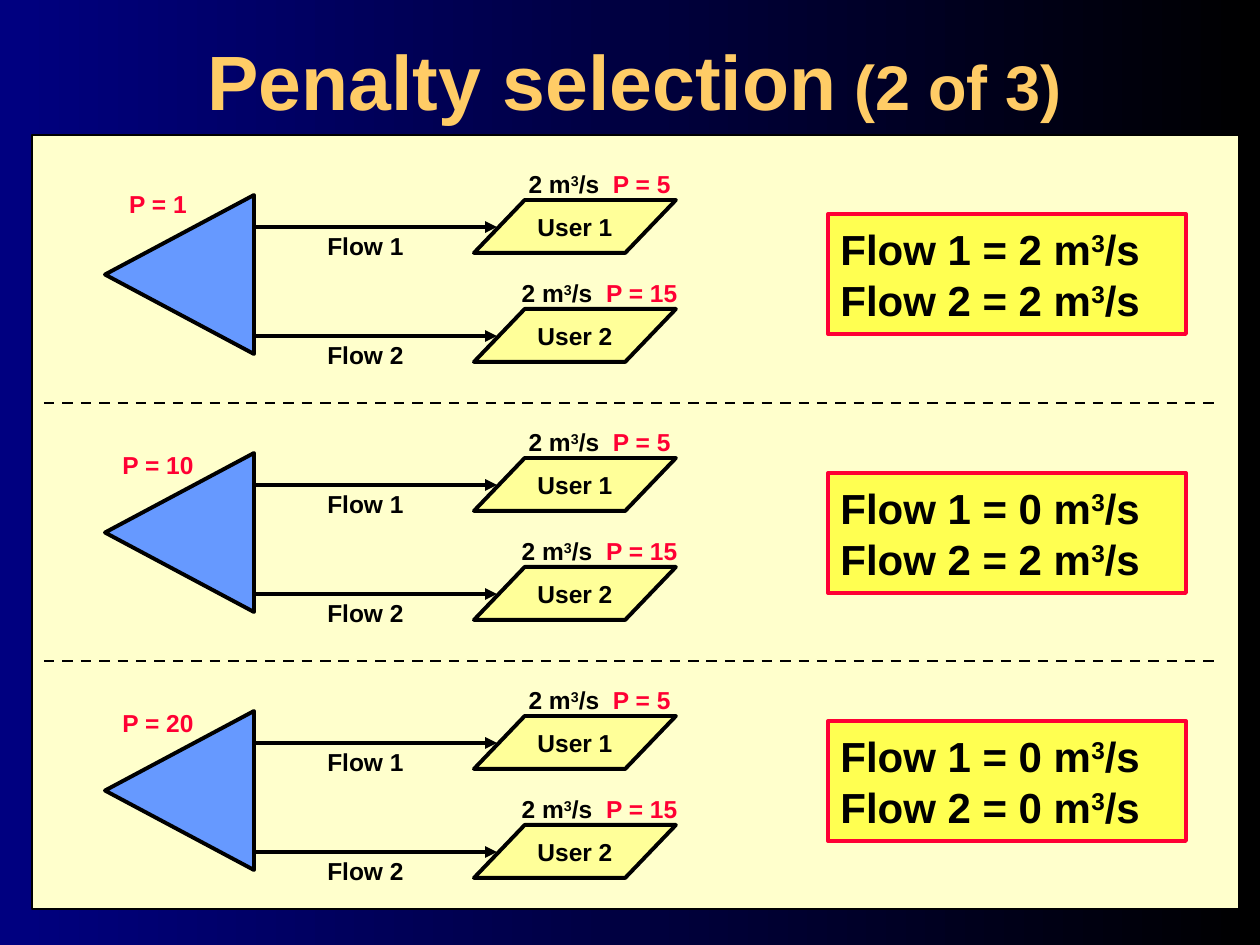
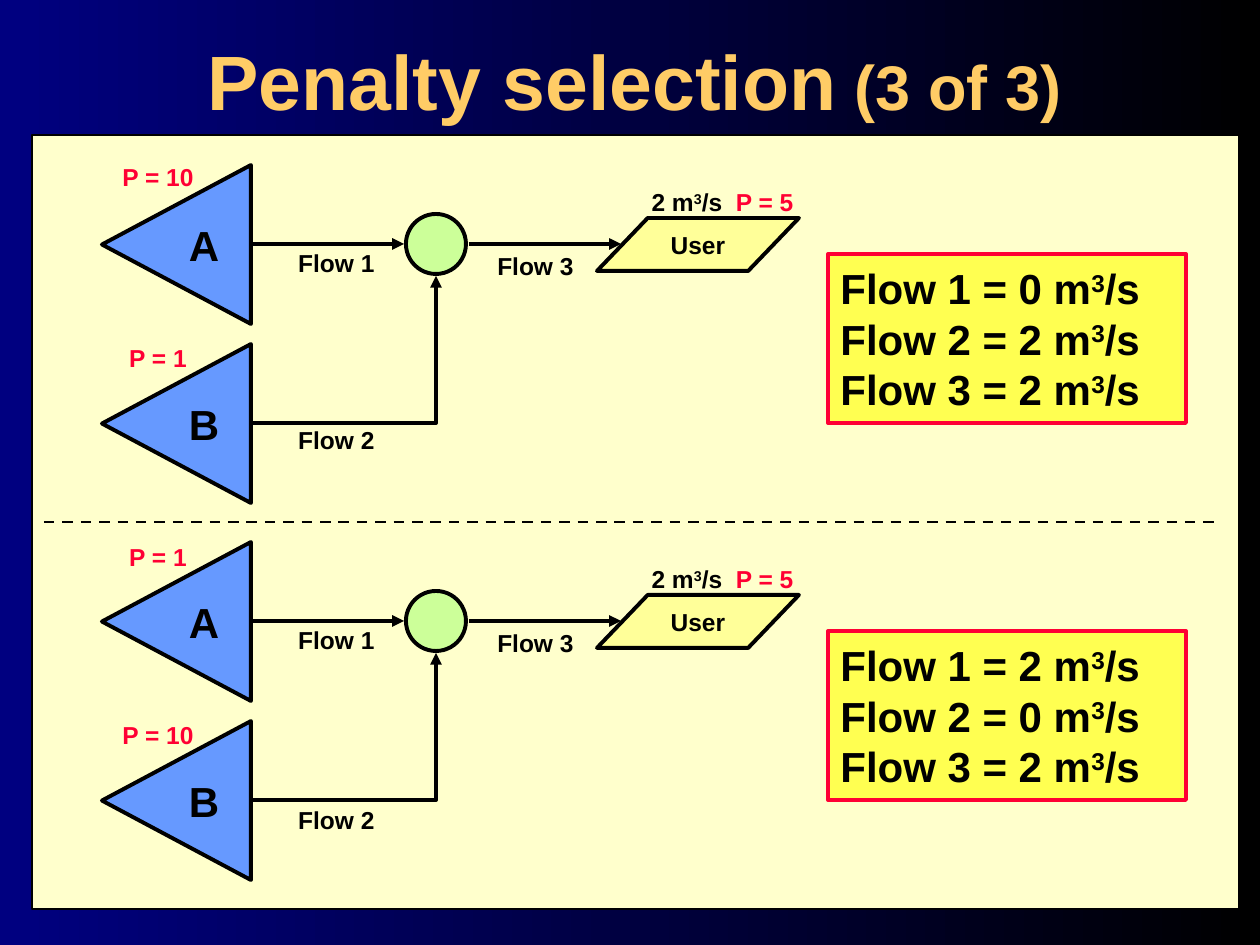
from lxml.etree import SubElement
from pptx import Presentation
from pptx.dml.color import RGBColor
from pptx.enum.dml import MSO_LINE
from pptx.enum.shapes import MSO_CONNECTOR, MSO_SHAPE
from pptx.enum.text import MSO_ANCHOR, MSO_AUTO_SIZE, PP_ALIGN
from pptx.oxml.ns import qn
from pptx.util import Emu, Pt

# Shared look
NAVY = RGBColor(0x00, 0x00, 0x80)
BLACK = RGBColor(0x00, 0x00, 0x00)
GOLD = RGBColor(0xFF, 0xCC, 0x66)
CREAM = RGBColor(0xFF, 0xFF, 0xCC)
YELLOW = RGBColor(0xFF, 0xFF, 0x00)
PALE_YELLOW = RGBColor(0xFF, 0xFF, 0x99)
RED = RGBColor(0xFF, 0x00, 0x33)
BLUE = RGBColor(0x66, 0x99, 0xFF)
GREEN = RGBColor(0xCC, 0xFF, 0x99)

FONT = {"name": "Arial", "bold": True}
SMALL = {**FONT, "size": Pt(14), "color": BLACK}
LARGE = {**FONT, "size": Pt(24), "color": BLACK}
TITLE = {**FONT, "size": Pt(44), "color": GOLD}
PENALTY = {**SMALL, "color": RED}
CENTERED = {"alignment": PP_ALIGN.CENTER}
TIGHT = {"alignment": PP_ALIGN.CENTER, "line_spacing": 0.8}
LEFT = {"alignment": PP_ALIGN.LEFT}

PIXEL = 914400 / 126
SLIDE_SIZE = (1260, 945)
TITLE_BOX = (20, 21, 1229, 95)
BOARD = (32, 135, 1207, 774)
DIVIDER = (44, 1216)
PANEL_LEFT, PANEL_WIDTH = 828, 358
TRIANGLE_SIZE = (159, 149)
LABEL_SIZE = (179, 37)

# Slide content: positions are top edges unless said otherwise
TWO_USERS = {
    "part": "(2 of 3)",
    "dividers": [403, 661],
    "panel_height": 120,
    "scenes": [
        {"offset": 0, "penalty": (1, 190), "flows": [2, 2], "panel": 214},
        {"offset": 258, "penalty": (10, 451), "flows": [0, 2], "panel": 473},
        {"offset": 516, "penalty": (20, 709), "flows": [0, 0], "panel": 721},
    ],
}
USERS = [("User 1", "Flow 1", 5), ("User 2", "Flow 2", 15)]
FIRST_ROW, ROW_STEP = 227, 109

TWO_SOURCES = {
    "part": "(3 of 3)",
    "dividers": [522],
    "panel_height": 169,
    "scenes": [
        {"offset": 0, "flows": [0, 2, 2], "panel": 254, "flow_2_label": 421,
         "sources": [("A", 10, 163), ("B", 1, 344)]},
        {"offset": 377, "flows": [2, 0, 2], "panel": 631, "flow_2_label": 801,
         "sources": [("A", 1, 543), ("B", 10, 721)]},
    ],
}
FIRST_SOURCE, SOURCE_STEP = 170, 179


def px(*lengths):
    return [Emu(round(length * PIXEL)) for length in lengths]


def apply_format(target, values):
    for name, value in values.items():
        if name == "color":
            target.color.rgb = value
        else:
            setattr(target, name, value)


# Text
def cubic_metres(text, font):
    return [(f"{text} m", font), ("3", {**font, "raised": True}), ("/s", font)]


def write(text_frame, paragraphs, paragraph_format, wrap=False):
    apply_format(text_frame, {"word_wrap": wrap, "auto_size": MSO_AUTO_SIZE.NONE,
                              "vertical_anchor": MSO_ANCHOR.MIDDLE})
    for index, runs in enumerate(paragraphs):
        paragraph = text_frame.add_paragraph() if index else text_frame.paragraphs[0]
        apply_format(paragraph, paragraph_format)
        for text, font in runs:
            run = paragraph.add_run()
            run.text = text
            apply_format(run.font, {k: v for k, v in font.items() if k != "raised"})
            if font.get("raised"):
                run._r.get_or_add_rPr().set("baseline", "30000")


def add_label(slide, box, runs, paragraph_format=CENTERED):
    write(slide.shapes.add_textbox(*px(*box)).text_frame, [runs], paragraph_format)


# Shapes and lines
def add_block(slide, kind, box, fill, line=BLACK, width=2.25):
    shape = slide.shapes.add_shape(kind, *px(*box))
    shape.shadow.inherit = False
    shape.fill.solid()
    shape.fill.fore_color.rgb = fill
    apply_format(shape.line, {"color": line, "width": Pt(width)})
    return shape


def add_line(slide, start, end, width=2.25, arrow=True, kind=MSO_CONNECTOR.STRAIGHT):
    connector = slide.shapes.add_connector(kind, *px(*start, *end))
    apply_format(connector.line, {"color": BLACK, "width": Pt(width)})
    properties = connector.element.spPr
    if arrow:
        SubElement(properties.find(qn("a:ln")), qn("a:tailEnd"), type="triangle")
    SubElement(properties, qn("a:effectLst"))
    return connector


# Diagram parts
def add_source(slide, left, top, penalty, penalty_top, name=None):
    triangle = add_block(slide, MSO_SHAPE.ISOSCELES_TRIANGLE,
                         (left, top, *TRIANGLE_SIZE), BLUE)
    triangle.rotation = 270
    if name:
        write(triangle.text_frame, [[(name, LARGE)]], CENTERED)
        triangle.element.txBody.bodyPr.set("vert", "eaVert")
    add_label(slide, (113, penalty_top, 90, 33), [(f"P = {penalty}", PENALTY)], TIGHT)


def add_user(slide, left, row, name, penalty):
    user = add_block(slide, MSO_SHAPE.PARALLELOGRAM, (left, row - 27, 202, 53), PALE_YELLOW)
    user.adjustments[0] = 0.958
    write(user.text_frame, [[(name, SMALL)]], CENTERED)
    demand = cubic_metres("2", SMALL) + [("  ", SMALL), (f"P = {penalty}", PENALTY)]
    add_label(slide, (left + 41, row - 62, 169, 43), demand, TIGHT)


def add_flow_label(slide, left, top, text):
    add_label(slide, (left, top, *LABEL_SIZE), [(text, SMALL)])


def add_panel(slide, top, height, flows):
    panel = add_block(slide, MSO_SHAPE.RECTANGLE,
                      (PANEL_LEFT, top, PANEL_WIDTH, height), YELLOW, RED)
    color = panel.element.spPr.find(qn("a:solidFill"))[0]
    SubElement(color, qn("a:alpha"), val="60000")
    lines = [cubic_metres(f"Flow {number} = {value}", LARGE)
             for number, value in enumerate(flows, 1)]
    write(panel.text_frame, lines, LEFT, wrap=True)


# Scenes
def draw_two_users(slide, scene):
    offset = scene["offset"]
    add_source(slide, 100, 200 + offset, *scene["penalty"])
    for index, (user, flow, penalty) in enumerate(USERS):
        row = FIRST_ROW + index * ROW_STEP + offset
        add_flow_label(slide, 276, row, flow)
        add_line(slide, (254, row), (497, row))
        add_user(slide, 474, row, user, penalty)


def draw_two_sources(slide, scene):
    offset = scene["offset"]
    for index, (name, penalty, penalty_top) in enumerate(scene["sources"]):
        top = FIRST_SOURCE + index * SOURCE_STEP + offset
        add_source(slide, 97, top, penalty, penalty_top, name)
    row = 244 + offset
    add_block(slide, MSO_SHAPE.OVAL, (406, row - 30, 60, 60), GREEN)
    add_user(slide, 597, row + 1, "User", 5)
    add_line(slide, (252, row), (404, row))
    add_line(slide, (469, row), (621, row))
    bend = add_line(slide, (252, row + SOURCE_STEP), (436, row + 32),
                    kind=MSO_CONNECTOR.ELBOW)
    bend.element.spPr.find(qn("a:prstGeom")).set("prst", "bentConnector2")
    add_flow_label(slide, 247, row, "Flow 1")
    add_flow_label(slide, 247, scene["flow_2_label"], "Flow 2")
    add_flow_label(slide, 446, row + 3, "Flow 3")


# Slide frame
def add_slide(presentation, content, draw_scene):
    slide = presentation.slides.add_slide(presentation.slide_layouts[5])
    background = slide.background.fill
    background.gradient()
    background.gradient_angle = 0
    for stop, color, position in zip(background.gradient_stops, (NAVY, BLACK), (0, 1)):
        apply_format(stop, {"color": color, "position": position})

    title = slide.shapes.title
    apply_format(title, dict(zip(("left", "top", "width", "height"), px(*TITLE_BOX))))
    runs = [("Penalty selection", TITLE),
            (f" {content['part']}", {**TITLE, "size": Pt(36)})]
    write(title.text_frame, [runs], CENTERED, wrap=True)
    apply_format(title.text_frame, {"vertical_anchor": MSO_ANCHOR.TOP,
                                    "margin_top": px(13)[0], "margin_bottom": 0})

    add_block(slide, MSO_SHAPE.RECTANGLE, BOARD, CREAM, width=1.5)
    for height in content["dividers"]:
        divider = add_line(slide, (DIVIDER[0], height), (DIVIDER[1], height), 1.5, False)
        divider.line.dash_style = MSO_LINE.DASH
    for scene in content["scenes"]:
        add_panel(slide, scene["panel"], content["panel_height"], scene["flows"])
        draw_scene(slide, scene)


def main():
    presentation = Presentation()
    presentation.slide_width, presentation.slide_height = px(*SLIDE_SIZE)
    add_slide(presentation, TWO_USERS, draw_two_users)
    add_slide(presentation, TWO_SOURCES, draw_two_sources)
    presentation.save("out.pptx")


if __name__ == "__main__":
    main()
